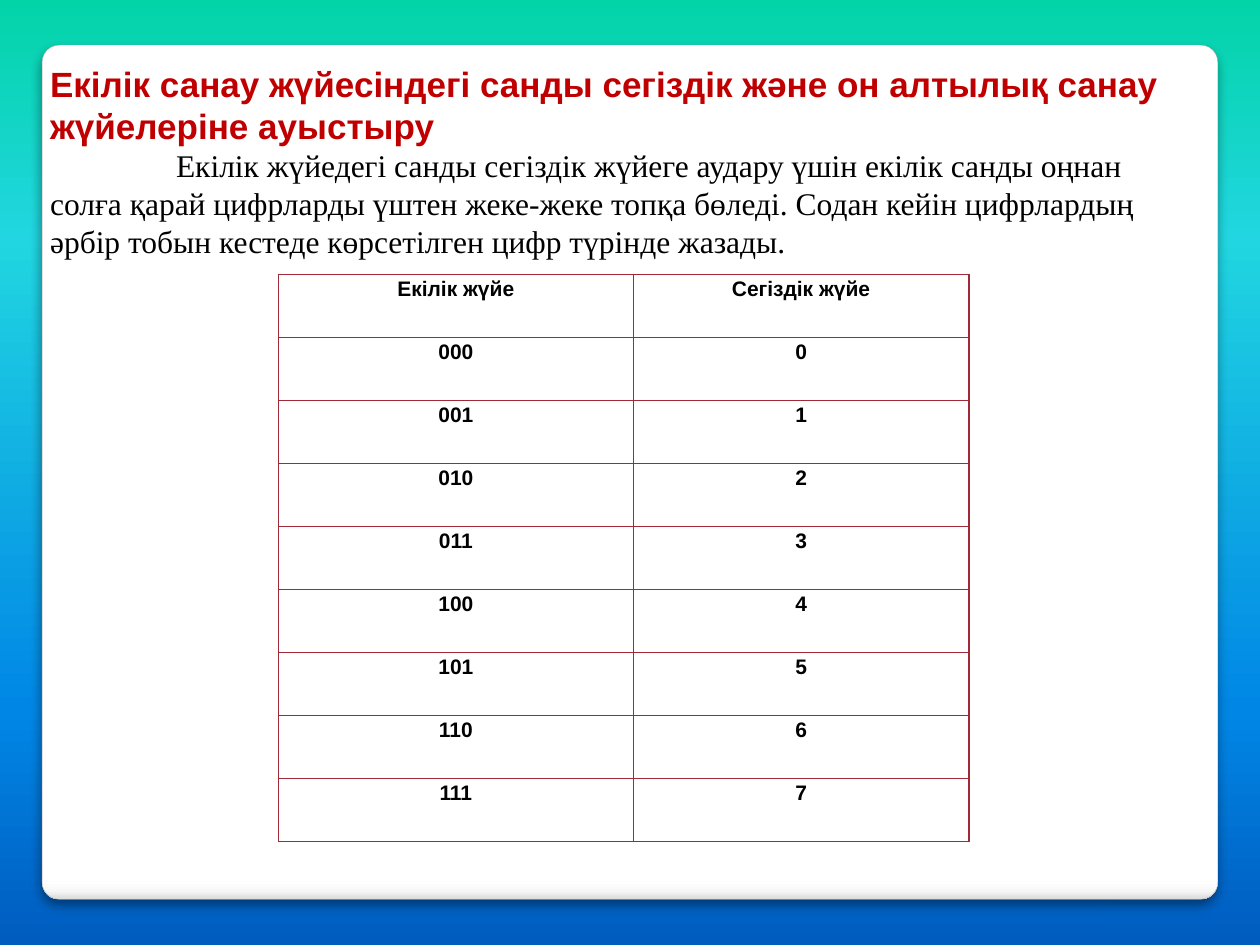
import dataclasses
import typing

import lxml.etree
import pptx
import pptx.dml.color
import pptx.dml.fill
import pptx.enum.shapes
import pptx.enum.text
import pptx.oxml.ns
import pptx.oxml.xmlchemy
import pptx.slide
import pptx.table
import pptx.text.text
import pptx.util

Cm = pptx.util.Cm
Pt = pptx.util.Pt
qn = pptx.oxml.ns.qn


class Stop(typing.NamedTuple):
    percent: int
    color: str


class Row(typing.NamedTuple):
    binary: str
    octal: str


@dataclasses.dataclass(frozen=True)
class Theme:
    heading_font: str = "Arial"
    body_font: str = "Times New Roman"
    heading_size: int = 20
    body_size: int = 18
    table_size: int = 12
    heading_color: str = "C00000"
    text_color: str = "000000"
    border_color: str = "9F2936"
    panel_line: str = "A4A4A4"
    shadow_color: str = "000000"
    background: tuple[Stop, ...] = (
        Stop(0, "03D4A8"), Stop(25, "21D6E0"), Stop(75, "0087E6"), Stop(100, "005CBF"),
    )
    panel: tuple[Stop, ...] = (
        Stop(0, "FFFFFF"), Stop(98, "FFFFFF"), Stop(99, "F7F7F7"), Stop(100, "DADADA"),
    )


THEME = Theme()
HEADING = "Екiлiк санау жүйесiндегi санды сегiздiк және он алтылық санау жүйелерiне ауыстыру"
EXPLANATION = (
    "Екiлiк жүйедегi санды сегiздiк жүйеге аудару үшiн екiлiк санды оңнан солға қарай "
    "цифрларды үштен жеке-жеке топқа бөледi. Содан кейiн цифрлардың әрбiр тобын кестеде "
    "көрсетiлген цифр түрiнде жазады."
)
ROWS = [Row("Екiлiк жүйе", "Сегiздiк жүйе")]
ROWS += [Row(f"{number:03b}", f"{number:o}") for number in range(8)]


def add_child(parent: typing.Any, tag: str, **attributes: typing.Any) -> typing.Any:
    values = {name: str(value) for name, value in attributes.items()}
    return lxml.etree.SubElement(parent, qn(tag), values)


def add_color(parent: typing.Any, color: str) -> typing.Any:
    return add_child(parent, "a:srgbClr", val=color)


def fill_downward(
    fill: pptx.dml.fill.FillFormat, owner: typing.Any, stops: tuple[Stop, ...]
) -> None:
    fill.gradient()
    fill.gradient_angle = 270
    stop_list = next(owner.iter(qn("a:gsLst")))
    for default_stop in list(stop_list):
        stop_list.remove(default_stop)
    for stop in stops:
        add_color(add_child(stop_list, "a:gs", pos=stop.percent * 1000), stop.color)


def write_text(
    paragraph: pptx.text.text._Paragraph,
    text: str,
    *,
    font: str,
    size: int,
    color: str,
    bold: bool = False,
    align: pptx.enum.text.PP_ALIGN = pptx.enum.text.PP_ALIGN.LEFT,
    line_spacing: pptx.util.Length | None = None,
    first_line_indent: pptx.util.Length | None = None,
) -> None:
    paragraph.alignment = align
    paragraph.line_spacing = line_spacing
    if first_line_indent is not None:
        paragraph._p.get_or_add_pPr().set("indent", str(first_line_indent))
    run = paragraph.add_run()
    run.text = text
    run.font.name = font
    run.font.size = Pt(size)
    run.font.bold = bold
    run.font.color.rgb = pptx.dml.color.RGBColor.from_string(color)


def add_panel(slide: pptx.slide.Slide) -> None:
    panel = slide.shapes.add_shape(
        pptx.enum.shapes.MSO_SHAPE.ROUNDED_RECTANGLE, Cm(0.85), Cm(0.91), Cm(23.7), Cm(17.22)
    )
    panel.adjustments[0] = 0.02
    properties = panel.element.spPr
    fill_downward(panel.fill, properties, THEME.panel)
    panel.line.color.rgb = pptx.dml.color.RGBColor.from_string(THEME.panel_line)
    panel.line.width = Pt(0.16)
    panel.shadow.inherit = False
    shadow = add_child(
        properties.find(qn("a:effectLst")), "a:outerShdw",
        blurRad=Pt(6), dist=Pt(4), dir=5400000, algn="t", rotWithShape=0,
    )
    add_child(add_color(shadow, THEME.shadow_color), "a:alpha", val=44000)


def add_explanation(slide: pptx.slide.Slide) -> None:
    box = slide.shapes.add_textbox(Cm(0.76), Cm(1.13), Cm(23.6), Cm(5.05))
    frame = box.text_frame
    frame.word_wrap = True
    write_text(
        frame.paragraphs[0], HEADING, font=THEME.heading_font,
        size=THEME.heading_size, color=THEME.heading_color, bold=True,
    )
    write_text(
        frame.add_paragraph(), EXPLANATION, font=THEME.body_font,
        size=THEME.body_size, color=THEME.text_color, first_line_indent=Cm(2.54),
    )


def outline_cell(cell: pptx.table._Cell) -> None:
    properties = cell._tc.get_or_add_tcPr()
    for position, side in enumerate(("a:lnL", "a:lnR", "a:lnT", "a:lnB")):
        line = add_child(properties, side, w=Pt(1))
        add_color(add_child(line, "a:solidFill"), THEME.border_color)
        properties.insert(position, line)


def add_conversion_table(slide: pptx.slide.Slide) -> None:
    widths = (Cm(7.16), Cm(6.76))
    row_height = Cm(1.27)
    table = slide.shapes.add_table(
        len(ROWS), len(widths), Cm(5.61), Cm(5.53), sum(widths), row_height * len(ROWS)
    ).table
    table.first_row = False
    table.horz_banding = False
    for column, width in zip(table.columns, widths):
        column.width = width
    for table_row, values in zip(table.rows, ROWS):
        table_row.height = row_height
        for cell, value in zip(table_row.cells, values):
            cell.fill.background()
            cell.margin_left = cell.margin_right = Cm(0.18)
            cell.margin_top = cell.margin_bottom = Cm(0)
            outline_cell(cell)
            write_text(
                cell.text_frame.paragraphs[0], value, font=THEME.heading_font,
                size=THEME.table_size, color=THEME.text_color, bold=True,
                align=pptx.enum.text.PP_ALIGN.CENTER, line_spacing=Pt(15),
            )


def main() -> None:
    presentation = pptx.Presentation()
    presentation.slide_width = Cm(25.4)
    presentation.slide_height = Cm(19.05)
    slide = presentation.slides.add_slide(presentation.slide_layouts[6])
    fill_downward(slide.background.fill, slide.element, THEME.background)
    add_panel(slide)
    add_conversion_table(slide)
    add_explanation(slide)
    presentation.save("out.pptx")


if __name__ == "__main__":
    main()
